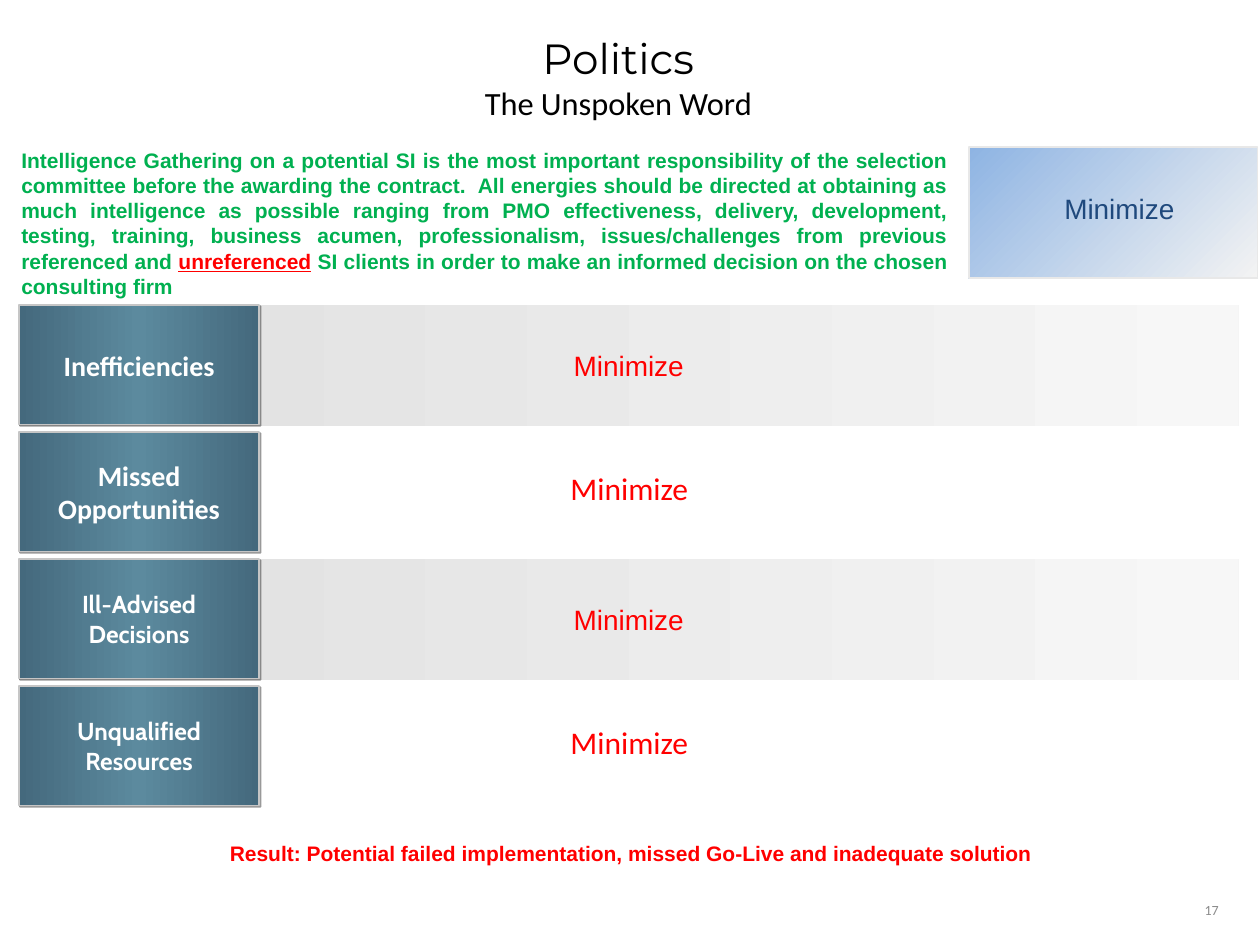
from dataclasses import dataclass

from lxml.etree import SubElement
from pptx import Presentation
from pptx.dml.color import RGBColor
from pptx.enum.shapes import MSO_SHAPE
from pptx.enum.text import MSO_ANCHOR, PP_ALIGN
from pptx.oxml.ns import qn
from pptx.util import Cm, Pt


@dataclass(frozen=True)
class Theme:
    black: str = "000000"
    white: str = "FFFFFF"
    red: str = "FF0000"
    green: str = "00B050"
    navy: str = "1F497D"
    number_gray: str = "8C8C8C"
    label_border: str = "C6C6C6"
    button_border: str = "E8E8E8"
    label_gradient: tuple = ((0, "44697D"), (50, "5C8A9E"), (100, "44697D"))
    bar_gradient: tuple = ((0, "DEDEDE"), (100, "F7F7F7"))
    button_gradient: tuple = ((0, "8EB4E3"), (100, "F3F3F3"))
    title_size: float = 24.1
    subtitle_size: float = 18.5
    large_size: float = 18
    medium_size: float = 16
    small_label_size: float = 14
    body_size: float = 12
    number_size: float = 8


class PageBuilder:
    def __init__(self, page, theme):
        self.page = page
        self.theme = theme

    def span(self, para, text, size, font, color, **formats):
        span = para.add_run()
        span.text = text
        values = {"size": Pt(size), "name": font, **formats}
        for name, value in values.items():
            setattr(span.font, name, value)
        span.font.color.rgb = RGBColor.from_string(color)

    def frame(self, box, align, anchor=MSO_ANCHOR.MIDDLE, inset=None, wrap=True):
        frame = box.text_frame
        values = {"word_wrap": wrap, "vertical_anchor": anchor}
        if inset is not None:
            sides = ("left", "top", "right", "bottom")
            values.update({f"margin_{side}": Cm(inset) for side in sides})
        for name, value in values.items():
            setattr(frame, name, value)
        para = frame.paragraphs[0]
        para.alignment = align
        return para

    def text(self, place, align=PP_ALIGN.CENTER, **layout):
        box = self.page.shapes.add_textbox(*map(Cm, place))
        return self.frame(box, align, **layout)

    def panel(self, kind, place, gradient, angle=0, border=None):
        box = self.page.shapes.add_shape(kind, *map(Cm, place))
        box.shadow.inherit = False
        if kind == MSO_SHAPE.ROUNDED_RECTANGLE:
            box.adjustments[0] = 0
        box.fill.gradient()
        box.fill.gradient_angle = angle
        stops = box._element.spPr.find(qn("a:gradFill")).find(qn("a:gsLst"))
        stops.clear()
        for position, color in gradient:
            stop = SubElement(stops, qn("a:gs"), pos=str(position * 1000))
            SubElement(stop, qn("a:srgbClr"), val=color)
        if border:
            box.line.color.rgb = RGBColor.from_string(border)
            box.line.width = Pt(1)
        else:
            box.line.fill.background()
        return box

    def bar(self, top, text):
        box = self.panel(MSO_SHAPE.ROUNDED_RECTANGLE, (0.38, top, 24.59, 2.44),
                         self.theme.bar_gradient)
        para = self.frame(box, PP_ALIGN.CENTER, inset=0)
        self.span(para, text, self.theme.medium_size, "Arial", self.theme.red)

    def label(self, top, text, size, font):
        box = self.panel(MSO_SHAPE.RECTANGLE, (0.38, top, 4.85, 2.41),
                         self.theme.label_gradient, border=self.theme.label_border)
        effects = box._element.spPr.find(qn("a:effectLst"))
        shadow = SubElement(effects, qn("a:outerShdw"), blurRad="0",
                            dist=str(Pt(1)), dir="2700000", rotWithShape="0")
        color = SubElement(shadow, qn("a:srgbClr"), val=self.theme.black)
        SubElement(color, qn("a:alpha"), val="40000")
        para = self.frame(box, PP_ALIGN.CENTER, inset=0.25)
        self.span(para, text, size, font, self.theme.white, bold=True)


def main():
    deck = Presentation()
    deck.slide_width, deck.slide_height = Cm(25.4), Cm(19.05)
    page = deck.slides.add_slide(deck.slide_layouts[6])
    theme = Theme()
    builder = PageBuilder(page, theme)

    title = builder.text((2.51, 0.56, 19.91, 1.98))
    builder.span(title, "Politics", theme.title_size, "Montserrat", theme.black)
    title.add_line_break()
    builder.span(title, "The Unspoken Word", theme.subtitle_size, "Calibri", theme.black)

    builder.panel(MSO_SHAPE.ROUNDED_RECTANGLE, (19.53, 2.97, 5.82, 2.64),
                  theme.button_gradient, angle=315, border=theme.button_border)
    button = builder.text((19.53, 3.81, 6.07, 0.86), anchor=MSO_ANCHOR.TOP)
    button.line_spacing = 0.9
    builder.span(button, "Minimize", theme.medium_size, "Arial", theme.navy)

    advice = builder.text((0.43, 2.97, 18.69, 1.14), PP_ALIGN.JUSTIFY,
                          anchor=MSO_ANCHOR.TOP, inset=0)
    for text, color, underline in (
        ("Intelligence Gathering on a potential SI is the most important responsibility "
         "of the selection committee before the awarding the contract.  All energies "
         "should be directed at obtaining as much intelligence as possible ranging from "
         "PMO effectiveness, delivery, development, testing, training, business acumen, "
         "professionalism, issues/challenges from previous referenced and ",
         theme.green, False),
        ("unreferenced", theme.red, True),
        (" SI clients in order to make an informed decision on the chosen consulting firm",
         theme.green, False),
    ):
        builder.span(advice, text, theme.body_size, "Arial", color,
                     bold=True, underline=underline)

    rows = (
        ("Inefficiencies", theme.medium_size, "Calibri", True),
        ("Missed Opportunities", theme.medium_size, "Calibri", False),
        ("Ill-Advised Decisions", theme.small_label_size, "Cabin", True),
        ("Unqualified Resources", theme.small_label_size, "Cabin", False),
    )
    for index, (name, size, font, shaded) in enumerate(rows):
        top = 6.15 + 2.56 * index
        if shaded:
            builder.bar(top, "Minimize")
        else:
            action = builder.text((11.25, top + 0.62, 2.92, 1.02), PP_ALIGN.LEFT,
                                  anchor=MSO_ANCHOR.TOP, wrap=False)
            builder.span(action, "Minimize", theme.large_size, "Calibri", theme.red)
        builder.label(top, name, size, font)

    result = builder.text((3.38, 16.94, 18.69, 1.14), anchor=MSO_ANCHOR.TOP, inset=0)
    builder.span(result,
                 "Result: Potential failed implementation, missed Go-Live and inadequate solution",
                 theme.body_size, "Arial", theme.red, bold=True)

    number = builder.text((18.9, 18.14, 5.92, 0.41), PP_ALIGN.RIGHT)
    builder.span(number, "17", theme.number_size, "Calibri", theme.number_gray)

    deck.save("out.pptx")


if __name__ == "__main__":
    main()
